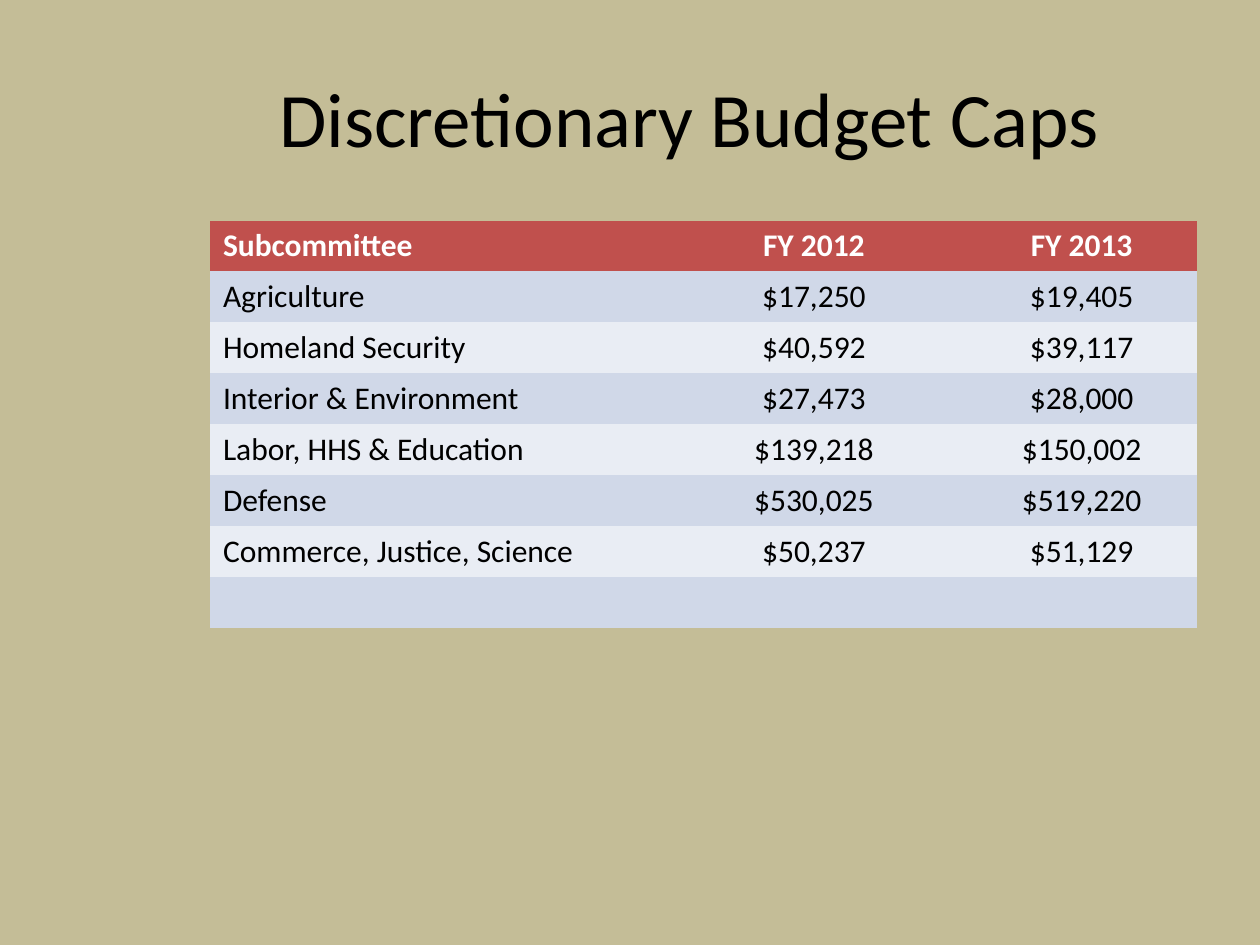
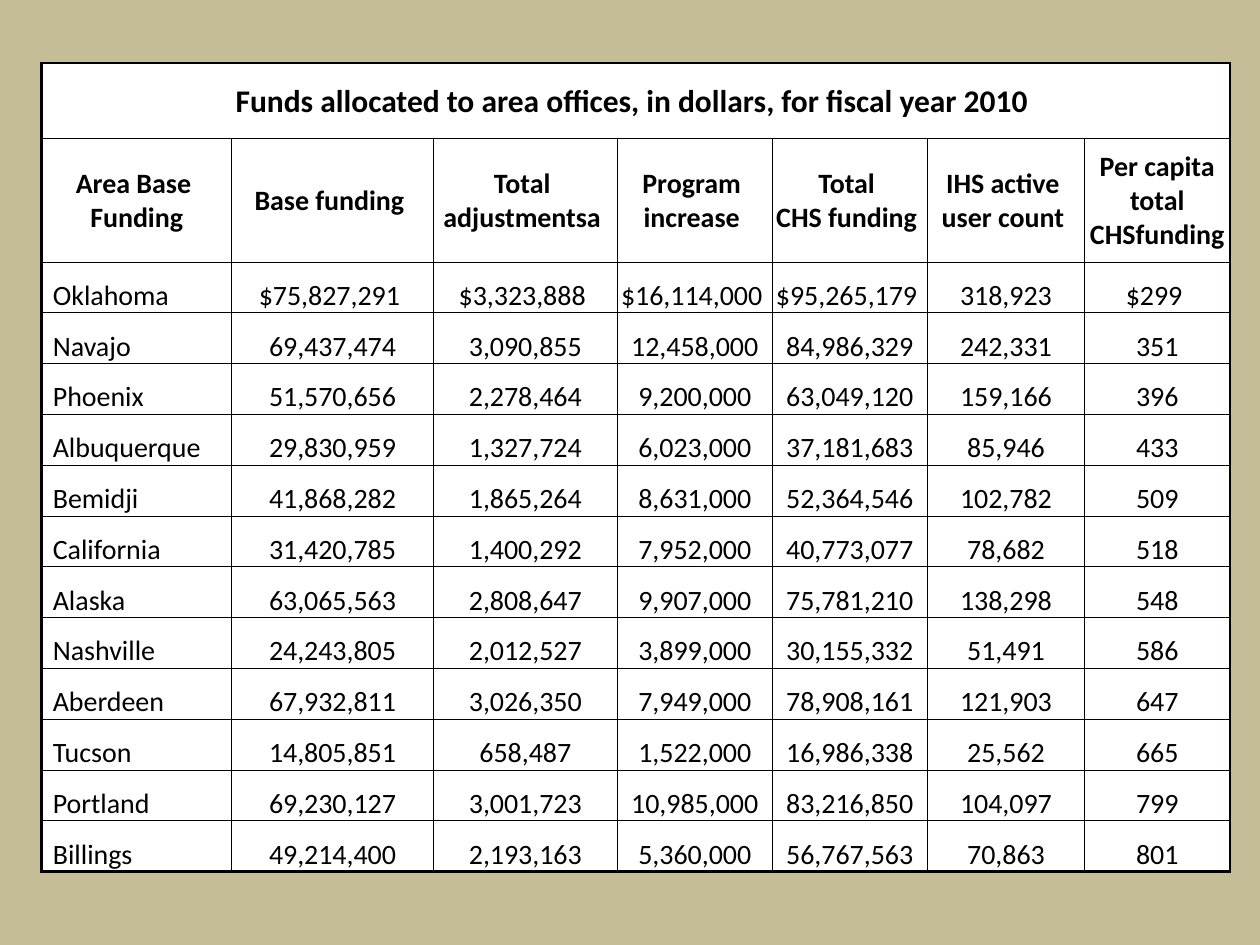
from lxml import etree
from pptx import Presentation
from pptx.dml.color import RGBColor
from pptx.enum.text import MSO_ANCHOR, PP_ALIGN
from pptx.oxml.ns import qn
from pptx.util import Inches, Pt

LEFT, CENTER = PP_ALIGN.LEFT, PP_ALIGN.CENTER
TOP, MIDDLE, BOTTOM = MSO_ANCHOR.TOP, MSO_ANCHOR.MIDDLE, MSO_ANCHOR.BOTTOM

SAND = RGBColor(0xC4, 0xBD, 0x97)
BLACK = RGBColor(0x00, 0x00, 0x00)
WHITE = RGBColor(0xFF, 0xFF, 0xFF)
RED = RGBColor(0xC0, 0x50, 0x4D)
BLUE_BAND = RGBColor(0xD0, 0xD8, 0xE8)
PALE_BAND = RGBColor(0xE9, 0xED, 0xF4)
FONT = "Calibri"
PLAIN_TABLE = "{2D5ABB26-0587-4C30-8999-92F81FD0307C}"
THIN, THICK = 0.5, 1.5

CAPS = [
    ("Subcommittee", "FY 2012", "FY 2013"),
    ("Agriculture", "$17,250", "$19,405"),
    ("Homeland Security", "$40,592", "$39,117"),
    ("Interior & Environment", "$27,473", "$28,000"),
    ("Labor, HHS & Education", "$139,218", "$150,002"),
    ("Defense", "$530,025", "$519,220"),
    ("Commerce, Justice, Science", "$50,237", "$51,129"),
    ("", "", ""),
]

FUNDS_TITLE = "Funds allocated to area offices, in dollars, for fiscal year 2010 "
FUNDS = [
    ("Area Base \nFunding", "Base funding ", "Total \nadjustmentsa ", "Program \nincrease ",
     "Total \nCHS funding ", "IHS active \nuser count ", "Per capita\ntotal CHSfunding"),
    ("Oklahoma", "$75,827,291 ", "$3,323,888 ", "$16,114,000 ", "$95,265,179 ", "318,923", "$299 "),
    ("Navajo", "69,437,474", "3,090,855", "12,458,000", "84,986,329", "242,331", "351"),
    ("Phoenix", "51,570,656", "2,278,464", "9,200,000", "63,049,120", "159,166", "396"),
    ("Albuquerque", "29,830,959", "1,327,724", "6,023,000", "37,181,683", "85,946", "433"),
    ("Bemidji", "41,868,282", "1,865,264", "8,631,000", "52,364,546", "102,782", "509"),
    ("California", "31,420,785", "1,400,292", "7,952,000", "40,773,077", "78,682", "518"),
    ("Alaska", "63,065,563", "2,808,647", "9,907,000", "75,781,210", "138,298", "548"),
    ("Nashville", "24,243,805", "2,012,527", "3,899,000", "30,155,332", "51,491", "586"),
    ("Aberdeen", "67,932,811", "3,026,350", "7,949,000", "78,908,161", "121,903", "647"),
    ("Tucson", "14,805,851", "658,487", "1,522,000", "16,986,338", "25,562", "665"),
    ("Portland", "69,230,127", "3,001,723", "10,985,000", "83,216,850", "104,097", "799"),
    ("Billings", "49,214,400", "2,193,163", "5,360,000", "56,767,563", "70,863", "801"),
]


def add_page(deck):
    """Add a blank page with the shared background."""
    page = deck.slides.add_slide(deck.slide_layouts[6])
    page.background.fill.solid()
    page.background.fill.fore_color.rgb = SAND
    return page


def write(frame, text, size, color=BLACK, bold=False, align=CENTER):
    """Write one paragraph, breaking the line at each newline."""
    para = frame.paragraphs[0]
    para.alignment = align
    para.font.size = Pt(size)
    for index, line in enumerate(text.split("\n")):
        if index:
            para.add_line_break()
        if line:
            span = para.add_run()
            span.text = line
            span.font.name = FONT
            span.font.size = Pt(size)
            span.font.bold = bold
            span.font.color.rgb = color


def add_title(page, box, text):
    """Place the page title in the given box."""
    frame = page.shapes.add_textbox(*map(Inches, box)).text_frame
    frame.word_wrap = True
    frame.vertical_anchor = MIDDLE
    write(frame, text, 44)


def add_grid(page, box, widths, heights):
    """Add an unstyled table with the given column widths and row heights."""
    shape = page.shapes.add_table(len(heights), len(widths), *map(Inches, box))
    grid = shape.table
    grid.first_row = grid.horz_banding = False
    grid._tbl.tblPr.find(qn("a:tableStyleId")).text = PLAIN_TABLE
    for column, width in zip(grid.columns, widths):
        column.width = Inches(width)
    for row, height in zip(grid.rows, heights):
        row.height = Inches(height)
    return grid


def fill_cell(cell, color):
    """Give a cell a solid fill."""
    cell.fill.solid()
    cell.fill.fore_color.rgb = color


def set_borders(cell, left, right, top, bottom):
    """Draw the four cell borders with widths in points."""
    properties = cell._tc.get_or_add_tcPr()
    for side, width in zip("LRTB", (left, right, top, bottom)):
        line = etree.SubElement(properties, qn(f"a:ln{side}"), w=str(Pt(width)))
        solid = etree.SubElement(line, qn("a:solidFill"))
        etree.SubElement(solid, qn("a:srgbClr"), val=str(BLACK))


def add_caps_table(page, box):
    """Build the banded table of budget caps."""
    grid = add_grid(page, box, (3.58, 2.42, 1.83), [box[3] / len(CAPS)] * len(CAPS))
    for row, values in enumerate(CAPS):
        header = row == 0
        band = RED if header else BLUE_BAND if row % 2 else PALE_BAND
        for column, text in enumerate(values):
            cell = grid.cell(row, column)
            cell.vertical_anchor = TOP
            write(cell.text_frame, text, 18, WHITE if header else BLACK, header,
                  CENTER if column else LEFT)
            fill_cell(cell, band)


def add_funds_table(page, box):
    """Build the ruled table of area office funds."""
    title_height, header_height = 0.6, 0.98
    offices = len(FUNDS) - 1
    office_height = (box[3] - title_height - header_height) / offices
    heights = [title_height, header_height] + [office_height] * offices
    grid = add_grid(page, box, (1.51, 1.6, 1.46, 1.23, 1.23, 1.25, 1.15), heights)
    last_row, last_column = len(heights) - 1, len(FUNDS[0]) - 1
    grid.cell(0, 0).merge(grid.cell(0, last_column))
    for row, values in enumerate([(FUNDS_TITLE,)] + FUNDS):
        heading = row < 2
        for column, text in enumerate(values):
            cell = grid.cell(row, column)
            office_name = column == 0 and not heading
            cell.margin_left = Inches(0.09 if office_name else 0.01)
            cell.margin_right = cell.margin_top = Inches(0.01)
            cell.margin_bottom = 0
            cell.vertical_anchor = MIDDLE if heading else BOTTOM
            write(cell.text_frame, text, 16 if row else 18, bold=heading,
                  align=LEFT if office_name else CENTER)
            set_borders(cell,
                        THICK if column == 0 else THIN,
                        THICK if column == len(values) - 1 else THIN,
                        THICK if row == 0 else THIN,
                        THICK if row == last_row else THIN)
            fill_cell(cell, WHITE)


def main():
    """Build and save the deck."""
    deck = Presentation()
    deck.slide_width, deck.slide_height = Inches(10), Inches(7.5)
    caps_page = add_page(deck)
    add_title(caps_page, (1.58, 0.3, 7.92, 1.25), "Discretionary Budget Caps ")
    add_caps_table(caps_page, (1.67, 1.75, 7.83, 3.24))
    add_funds_table(add_page(deck), (0.33, 0.5, 9.42, 6.42))
    deck.save("out.pptx")


if __name__ == "__main__":
    main()
